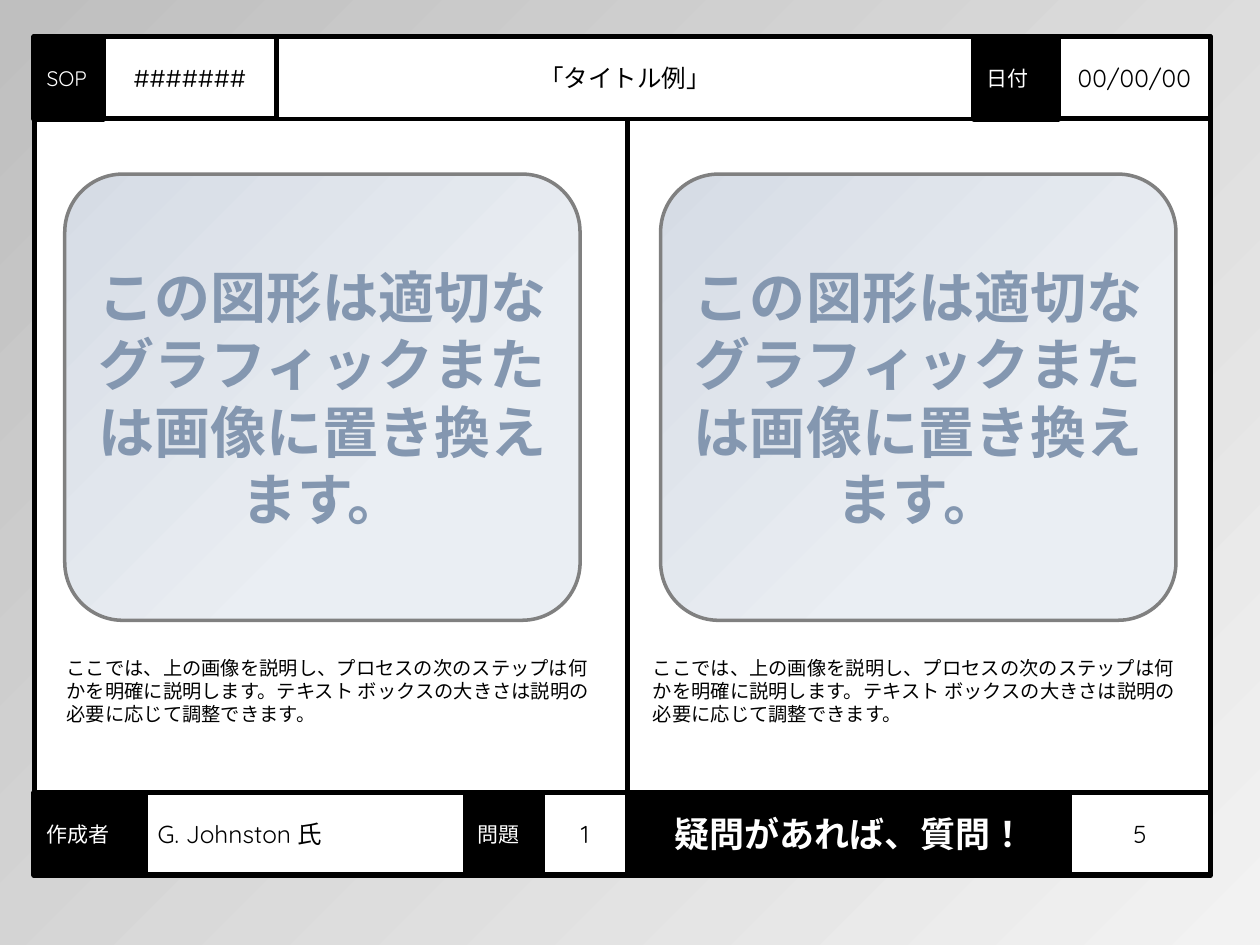
from dataclasses import dataclass
from typing import Optional

from lxml.etree import SubElement
from pptx import Presentation
from pptx.dml.color import RGBColor
from pptx.dml.fill import FillFormat
from pptx.enum.lang import MSO_LANGUAGE_ID as Language
from pptx.enum.shapes import MSO_CONNECTOR as Connector
from pptx.enum.shapes import MSO_SHAPE as ShapeKind
from pptx.enum.text import MSO_ANCHOR as Anchor
from pptx.enum.text import MSO_AUTO_SIZE as AutoSize
from pptx.enum.text import PP_ALIGN as Align
from pptx.oxml.ns import qn
from pptx.shapes.autoshape import Shape
from pptx.slide import Slide
from pptx.text.text import TextFrame
from pptx.util import Pt

BLACK = RGBColor(0x00, 0x00, 0x00)
WHITE = RGBColor(0xFF, 0xFF, 0xFF)
GRAY = RGBColor(0x80, 0x80, 0x80)
SLATE = RGBColor(0x84, 0x97, 0xB0)
PANEL_LIGHT = RGBColor(0xEA, 0xEE, 0xF3)
PANEL_DARK = RGBColor(0xD6, 0xDC, 0xE5)
BACKGROUND_LIGHT = RGBColor(0xF2, 0xF2, 0xF2)
BACKGROUND_DARK = RGBColor(0xBF, 0xBF, 0xBF)

FONT = "Quicksand"
LEFT, TOP, WIDTH, HEIGHT = 19.5, 21, 672, 479.5
ROW_HEIGHT = 47
FOOTER_TOP = 453
DIVIDER_X = 358.5
TITLE = "「タイトル例」"
PANEL_TEXT = "この図形は適切なグラフィックまたは画像に置き換え\vます。"
CAPTION = (
    "ここでは、上の画像を説明し、プロセスの次のステップは何かを明確に説明します。"
    "テキスト ボックスの大きさは説明の必要に応じて調整できます。"
)


@dataclass(frozen=True)
class Box:
    left: float
    top: float
    width: float
    height: float


@dataclass(frozen=True)
class TextStyle:
    size: float
    color: RGBColor
    align: Align = Align.LEFT
    bold: bool = False


@dataclass(frozen=True)
class Cell:
    text: str
    left: float
    right: float
    style: TextStyle
    fill: RGBColor = WHITE
    line_width: float = 2.75


@dataclass(frozen=True)
class Step:
    panel_left: float
    caption_left: float


LABEL = TextStyle(12, WHITE)
VALUE = TextStyle(14, BLACK, Align.CENTER)
AUTHOR = TextStyle(14, BLACK)
BANNER = TextStyle(20, WHITE, Align.CENTER, True)
PANEL = TextStyle(32, SLATE, Align.CENTER, True)
BODY = TextStyle(11, BLACK)

HEADER = [
    Cell("SOP", 19.5, 59, LABEL, BLACK, 3),
    Cell("#######", 59, 158, VALUE),
    Cell("日付", 556.5, 605, LABEL, BLACK, 3),
    Cell("00/00/00", 605, 691.5, VALUE),
    Cell(TITLE, 158, 556.5, VALUE),
]
FOOTER = [
    Cell("作成者", 19.5, 83, LABEL, BLACK, 3),
    Cell("G. Johnston 氏", 83, 267, AUTHOR),
    Cell("疑問があれば、質問！", 360, 611.5, BANNER, BLACK, 3),
    Cell("5", 611.5, 691.5, VALUE),
    Cell("問題", 266, 312.5, LABEL, BLACK, 3),
    Cell("1", 310, 358.5, VALUE),
]
STEPS = [Step(37, 31), Step(377.5, 366)]


def write_text(frame: TextFrame, text: str, style: TextStyle) -> None:
    frame.text = text
    frame.word_wrap = True
    paragraph = frame.paragraphs[0]
    paragraph.alignment = style.align
    for run in paragraph.runs:
        run.font.name = FONT
        run.font.size = Pt(style.size)
        run.font.bold = style.bold
        run.font.color.rgb = style.color
        run.font.language_id = Language.JAPANESE


def fill_gradient(fill: FillFormat, start: RGBColor, end: RGBColor, first_stop: float = 0) -> None:
    fill.gradient()
    fill.gradient_angle = 135
    first, last = fill.gradient_stops
    first.color.rgb = start
    first.position = first_stop
    last.color.rgb = end
    last.position = 1


def style_box(shape: Shape, fill: Optional[RGBColor], line_width: float) -> None:
    if fill is None:
        shape.fill.background()
    else:
        shape.fill.solid()
        shape.fill.fore_color.rgb = fill
    shape.line.color.rgb = BLACK
    shape.line.width = Pt(line_width)


def add_box(slide: Slide, kind: ShapeKind, box: Box) -> Shape:
    shape = slide.shapes.add_shape(
        kind, Pt(box.left), Pt(box.top), Pt(box.width), Pt(box.height)
    )
    shape.shadow.inherit = False
    return shape


def add_frame(slide: Slide, height: float, fill: Optional[RGBColor]) -> None:
    frame = add_box(slide, ShapeKind.RECTANGLE, Box(LEFT, TOP, WIDTH, height))
    style_box(frame, fill, 2.75)


def format_cell(shape: Shape, cell: Cell) -> None:
    style_box(shape, cell.fill, cell.line_width)
    write_text(shape.text_frame, cell.text, cell.style)
    shape.text_frame.vertical_anchor = Anchor.MIDDLE


def add_row(slide: Slide, cells: list[Cell], top: float) -> None:
    for cell in cells:
        box = Box(cell.left, top, cell.right - cell.left, ROW_HEIGHT)
        if cell.text == TITLE:
            shape = slide.shapes.title
            shape.left, shape.top = Pt(box.left), Pt(box.top)
            shape.width, shape.height = Pt(box.width), Pt(box.height)
            shape.element.getparent().append(shape.element)
            shape.text_frame.auto_size = AutoSize.NONE
        else:
            shape = add_box(slide, ShapeKind.RECTANGLE, box)
        format_cell(shape, cell)


def add_step(slide: Slide, step: Step) -> None:
    panel = add_box(slide, ShapeKind.ROUNDED_RECTANGLE, Box(step.panel_left, 99.5, 294.5, 255))
    panel.adjustments[0] = 0.13
    fill_gradient(panel.fill, PANEL_LIGHT, PANEL_DARK, 0.32)
    panel.line.color.rgb = GRAY
    panel.line.width = Pt(2)
    write_text(panel.text_frame, PANEL_TEXT, PANEL)
    panel.text_frame.vertical_anchor = Anchor.MIDDLE

    caption = slide.shapes.add_textbox(Pt(step.caption_left), Pt(371.5), Pt(317.5), Pt(47.5))
    write_text(caption.text_frame, CAPTION, BODY)
    caption.text_frame.auto_size = AutoSize.SHAPE_TO_FIT_TEXT


def add_divider(slide: Slide) -> None:
    divider = slide.shapes.add_connector(
        Connector.STRAIGHT, Pt(DIVIDER_X), Pt(TOP + ROW_HEIGHT), Pt(DIVIDER_X), Pt(FOOTER_TOP)
    )
    divider.line.color.rgb = BLACK
    divider.line.width = Pt(3)
    SubElement(divider.element.spPr, qn("a:effectLst"))


def main() -> None:
    presentation = Presentation()
    presentation.slide_width = Pt(720)
    presentation.slide_height = Pt(540)
    slide = presentation.slides.add_slide(presentation.slide_layouts[5])
    fill_gradient(slide.background.fill, BACKGROUND_LIGHT, BACKGROUND_DARK)
    add_frame(slide, HEIGHT, WHITE)
    add_frame(slide, ROW_HEIGHT, None)
    add_row(slide, HEADER, TOP)
    for step in STEPS:
        add_step(slide, step)
    add_divider(slide)
    add_row(slide, FOOTER, FOOTER_TOP)
    presentation.save("out.pptx")


if __name__ == "__main__":
    main()
